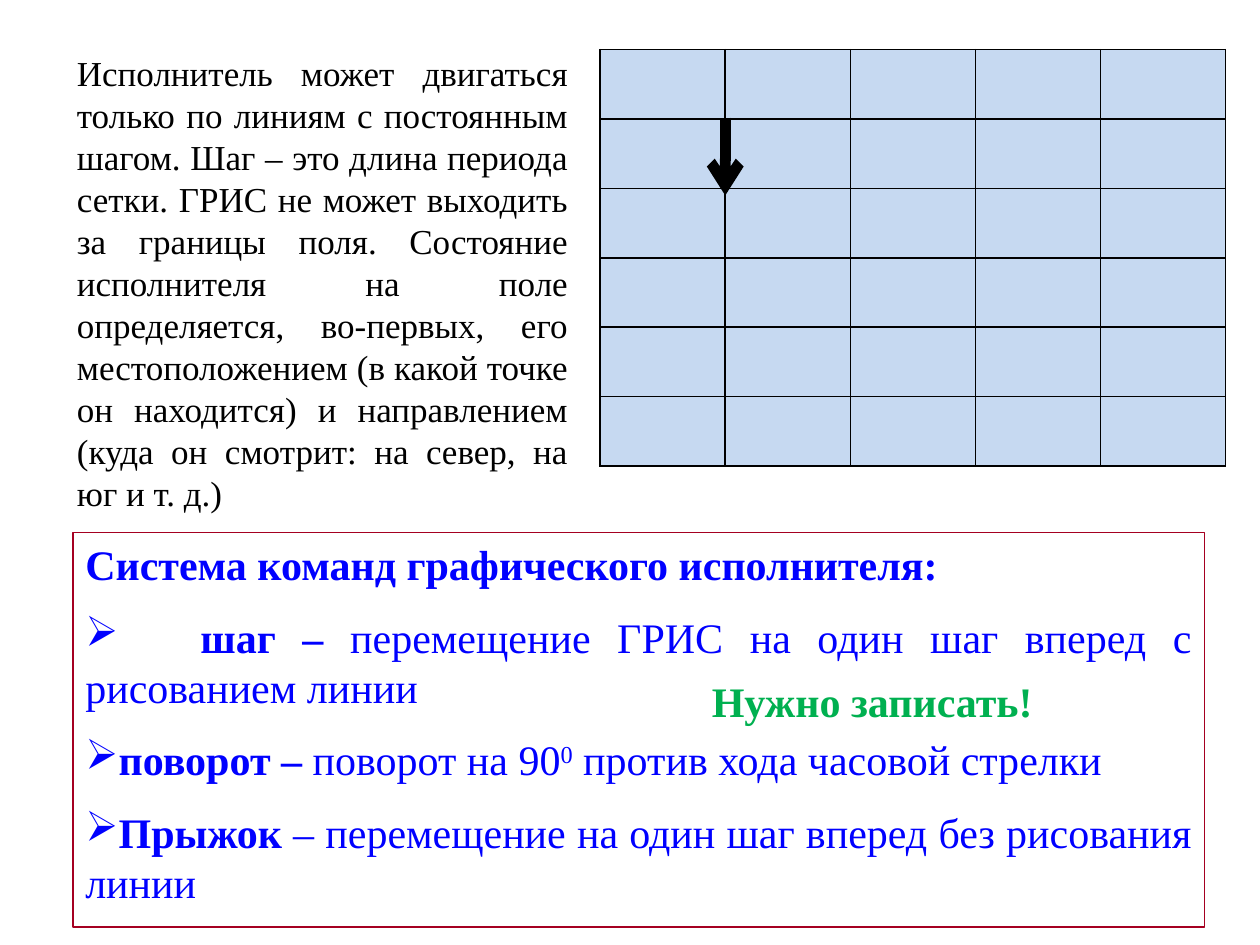
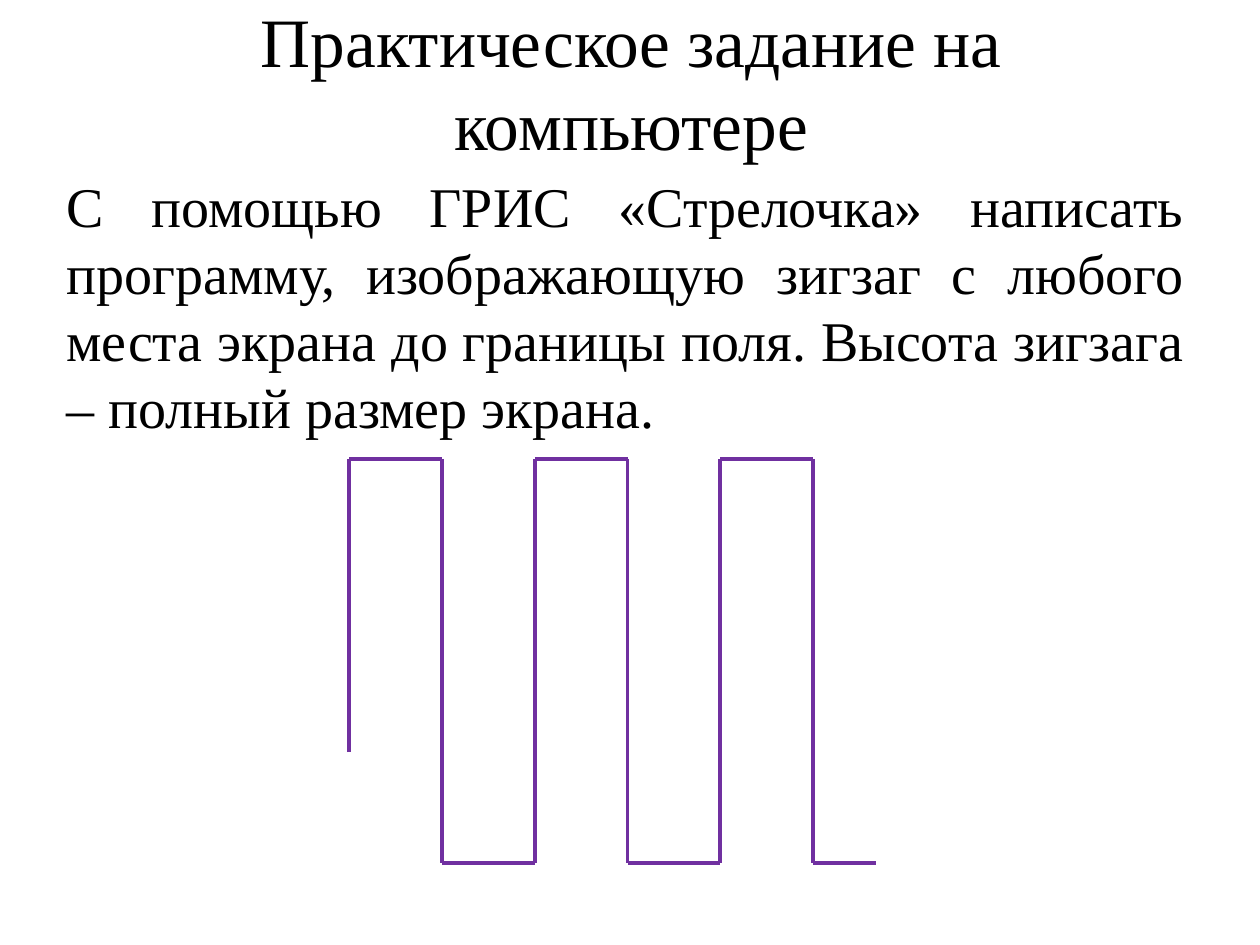
"""Builds two slides about a graphic performer: its commands and a zigzag exercise."""
from dataclasses import dataclass
from itertools import pairwise

from lxml.etree import SubElement
from pptx import Presentation
from pptx.dml.color import RGBColor
from pptx.enum.shapes import MSO_CONNECTOR, MSO_SHAPE
from pptx.enum.text import MSO_ANCHOR, PP_ALIGN
from pptx.oxml.ns import qn
from pptx.util import Cm, Pt


@dataclass(frozen=True)
class Theme:
    font: str = "Times New Roman"
    text: str = "000000"
    command: str = "0000FF"
    frame: str = "A50021"
    reminder: str = "00B050"
    cell: str = "C6D9F1"
    zigzag: str = "7030A0"
    title_size: float = 39.6
    task_size: float = 32
    command_size: float = 24
    body_size: float = 20


theme = Theme()


def add_line(shapes, start, end, color, width):
    line = shapes.add_connector(MSO_CONNECTOR.STRAIGHT, *map(Cm, (*start, *end)))
    line.line.color.rgb = RGBColor.from_string(color)
    line.line.width = Pt(width)
    SubElement(line._element.spPr, qn("a:effectLst"))
    return line


def add_text(slide, text, box, size, color, alignment, bold=False):
    shape = slide.shapes.add_textbox(*map(Cm, box))
    shape.text_frame.word_wrap = True
    paragraph = shape.text_frame.paragraphs[0]
    paragraph.text = text
    paragraph.alignment = alignment
    font = paragraph.runs[0].font
    font.name, font.size, font.bold = theme.font, Pt(size), bold
    font.color.rgb = RGBColor.from_string(color)
    return shape


presentation = Presentation()
presentation.slide_width, presentation.slide_height = Cm(25.4), Cm(19.05)
blank_layout = presentation.slide_layouts[6]

commands_slide = presentation.slides.add_slide(blank_layout)
add_text(
    commands_slide,
    "Исполнитель может двигаться только по линиям с постоянным шагом. "
    "Шаг – это длина периода сетки. ГРИС не может выходить за границы поля. "
    "Состояние исполнителя на поле определяется, во-первых, его местоположением "
    "(в какой точке он находится) и направлением (куда он смотрит: на север, на юг и т. д.)",
    (1.3, 0.91, 10.4, 9.65), theme.body_size, theme.text, PP_ALIGN.JUSTIFY,
)

commands_box = commands_slide.shapes.add_shape(
    MSO_SHAPE.RECTANGLE, Cm(1.47), Cm(10.74), Cm(22.81), Cm(7.95)
)
commands_box.shadow.inherit = False
commands_box.fill.background()
commands_box.line.color.rgb = RGBColor.from_string(theme.frame)
commands_box.line.width = Pt(0.75)
commands_frame = commands_box.text_frame
commands_frame.word_wrap = True
commands_frame.vertical_anchor = MSO_ANCHOR.TOP

commands = [
    [("Система команд графического исполнителя:", True)],
    [("\tшаг – ", True), ("перемещение ГРИС на один шаг вперед с рисованием линии", False)],
    [("поворот – ", True), ("поворот на 90", False), ("0", False),
     (" против хода часовой стрелки", False)],
    [("Прыжок", True), (" – перемещение на один шаг вперед без рисования линии", False)],
]
for index, pieces in enumerate(commands):
    paragraph = commands_frame.add_paragraph() if index else commands_frame.paragraphs[0]
    paragraph.alignment = PP_ALIGN.JUSTIFY
    if index:
        paragraph.space_before = Pt(12.5)
        properties = paragraph._p.get_or_add_pPr()
        SubElement(properties, qn("a:buChar"), char="➢")
        if pieces[0][0].startswith("\t"):
            tabs = SubElement(properties, qn("a:tabLst"))
            SubElement(tabs, qn("a:tab"), pos=str(Cm(2.32)), algn="l")
    for text, bold in pieces:
        run = paragraph.add_run()
        run.text = text
        run.font.name, run.font.size, run.font.bold = theme.font, Pt(theme.command_size), bold
        run.font.color.rgb = RGBColor.from_string(theme.command)
        if text == "0":
            run._r.get_or_add_rPr().set("baseline", "30000")

rows, columns = 6, 5
field_left, field_top, cell_width, cell_height = 12.1, 1, 2.52, 1.4
field = commands_slide.shapes.add_table(
    rows, columns, Cm(field_left), Cm(field_top),
    Cm(columns * cell_width), Cm(rows * cell_height),
).table
field.first_row = field.horz_banding = False
for cell in field.iter_cells():
    cell_properties = cell._tc.get_or_add_tcPr()
    for side in ("lnL", "lnR", "lnT", "lnB"):
        border = SubElement(cell_properties, qn(f"a:{side}"), w=str(Pt(1)))
        border_fill = SubElement(border, qn("a:solidFill"))
        SubElement(border_fill, qn("a:srgbClr"), val=theme.text)
    cell.fill.solid()
    cell.fill.fore_color.rgb = RGBColor.from_string(theme.cell)

performer_x = field_left + cell_width
performer = add_line(
    commands_slide.shapes, (performer_x, 2.37), (performer_x, 3.94), theme.text, 6
)
SubElement(performer.line._get_or_add_ln(), qn("a:tailEnd"), type="arrow")

reminder = add_text(
    commands_slide, "Нужно записать!", (14.1, 13.49, 7.04, 1.27),
    theme.command_size, theme.reminder, PP_ALIGN.LEFT, bold=True,
)
reminder.text_frame.word_wrap = False

task_slide = presentation.slides.add_slide(blank_layout)
title = add_text(
    task_slide, "Практическое задание на компьютере", (1.3, 0.05, 22.86, 3.18),
    theme.title_size, theme.text, PP_ALIGN.CENTER,
)
title.text_frame.vertical_anchor = MSO_ANCHOR.MIDDLE
title.text_frame.margin_left = title.text_frame.margin_right = Cm(0.6)
add_text(
    task_slide,
    "С помощью ГРИС «Стрелочка» написать программу, изображающую зигзаг "
    "с любого места экрана до границы поля. Высота зигзага – полный размер экрана.",
    (1.09, 3.33, 23.04, 13.69), theme.task_size, theme.text, PP_ALIGN.JUSTIFY,
)

zigzag_left, zigzag_step, zigzag_top, zigzag_bottom = 7.04, 1.87, 9.25, 17.4
zigzag_points = [(zigzag_left, 15.16)]
for turn in range(6):
    x = zigzag_left + turn * zigzag_step
    levels = (zigzag_bottom, zigzag_top) if turn % 2 == 0 else (zigzag_top, zigzag_bottom)
    zigzag_points += [(x, level) for level in levels]
del zigzag_points[1]
zigzag_points.append((17.65, zigzag_bottom))

zigzag = task_slide.shapes.add_group_shape()
for start, end in pairwise(zigzag_points):
    add_line(zigzag.shapes, start, end, theme.zigzag, 2.25)

presentation.save("out.pptx")
